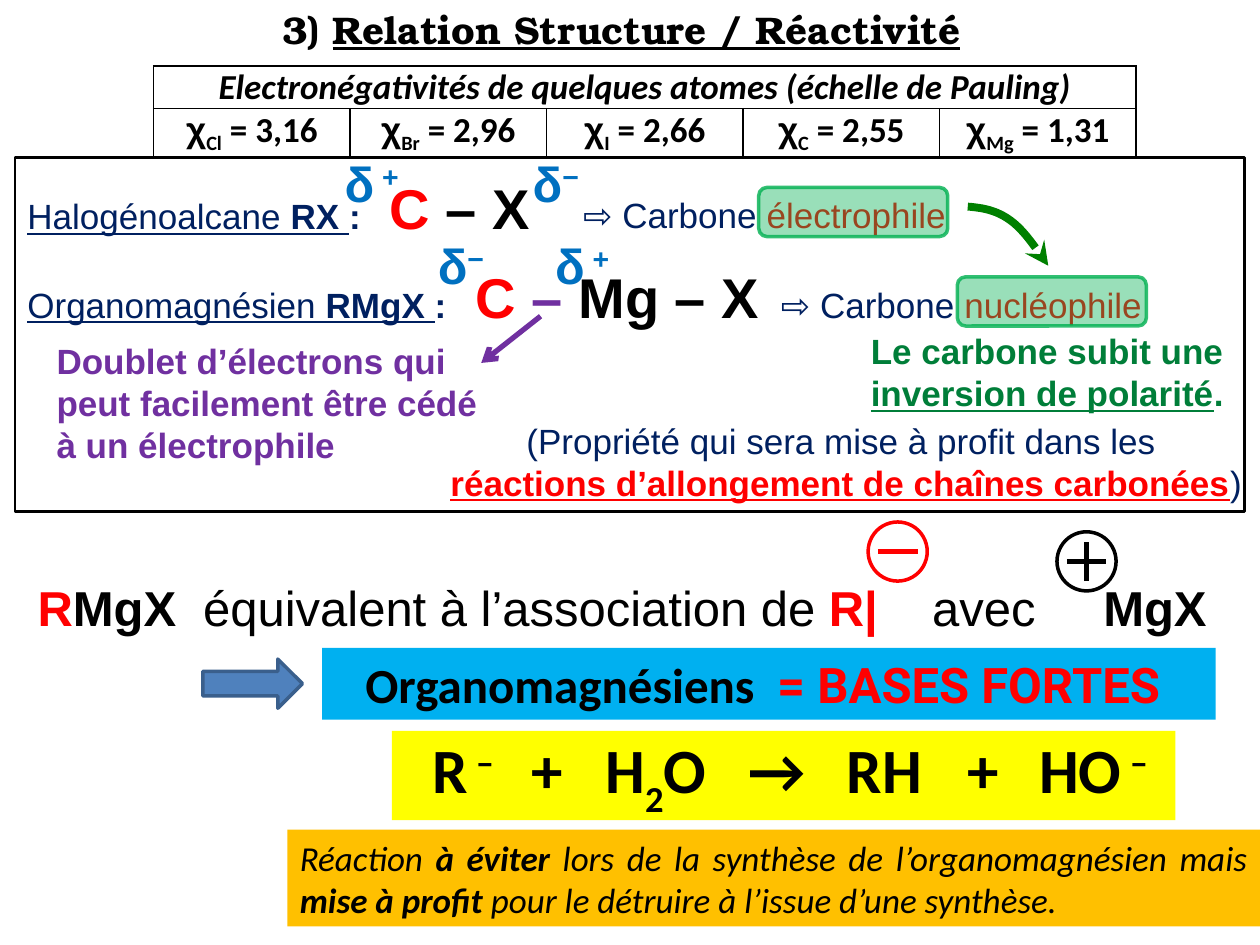
from pptx import Presentation
from pptx.util import Pt
from pptx.dml.color import RGBColor
from pptx.enum.shapes import MSO_SHAPE as Shape, MSO_CONNECTOR as Link
from pptx.enum.text import PP_ALIGN as Align, MSO_ANCHOR as Anchor
from pptx.oxml.ns import qn
from lxml.etree import SubElement as Sub

THEME = dict(
    black="000000", white="FFFFFF", red="FF0000", navy="002060", blue="0070C0",
    purple="7030A0", forest="007E39", green="00B050", arrow="008000",
    sky="00B0F0", yellow="FFFF00", amber="FFC000", steel="4F81BD", edge="3A5F8C",
    sans="Arial", text="Calibri", bold="Roboto", serif="TeX Gyre Bonum",
    small=20, title=22, mid=28, big=32, huge=36)
SIDES = {"l": Align.LEFT, "c": Align.CENTER, "j": Align.JUSTIFY}
SHIFTS = {"^": "30000", "_": "-25000", "v": "-30000"}

# Content: a run is (text, flags, colour, size, font), all but the text optional.
# Flags: b bold, i italic, u underline, ^ raised, _ lowered, v lowered further
TITLE = [("3) ",), ("Relation Structure / Réactivité", "u")]
HEAD = "Electronégativités de quelques atomes (échelle de Pauling)"
ATOMS = [("Cl", "3,16"), ("Br", "2,96"), ("I", "2,66"), ("C", "2,55"), ("Mg", "1,31")]

# Boxes: place, paragraphs, colour, and options for type and layout
NOTES = [
    ((8.6, 95.8, 329, 46), [[
        ("Halogénoalcane ", "u"), ("RX", "bu"), (" ", "u"), (":\t", "b"),
        ("C", "b", "red", "big"), (" – X", "b", "black", "big")]],
     "navy", dict(tabs=[206.9])),
    ((8.6, 146.5, 448, 46), [[
        ("Organomagnésien ", "u"), ("RMgX", "bu"), (" ", "u"), (":\t", "b"),
        ("C ", "b", "red", "big"), ("–", "b", "purple", "big"),
        (" Mg – X", "b", "black", "big")]],
     "navy", dict(tabs=[256.2])),
    ((490.5, 185, 229, 55.4), [[
        ("Le carbone subit une ", "b"), ("inversion de polarité", "bu"), (".", "b")]],
     "forest", {}),
    ((25.2, 190.4, 260.6, 80), [
        [("Doublet d’électrons qui", "b")],
        [("peut facilement être cédé à un électrophile", "b")]], "purple", {}),
    ((326.2, 107.3, 232, 31.7), [[("⇨ Carbone ",), ("électrophile", "", "red")]],
     "navy", dict(al="j")),
    ((439.2, 158.2, 232, 31.7), [[("⇨ Carbone ",), ("nucléophile", "", "red")]],
     "navy", dict(al="j")),
    ((247, 236.2, 473, 55.4), [
        [("(Propriété qui sera mise à profit dans les ",)],
        [("réactions d’allongement de chaînes carbonées", "bu", "red"), (")",)]],
     "navy", dict(al="c")),
    ((14.4, 326.4, 705, 41), [[
        ("R", "b", "red"), ("MgX\t", "b"), ("équivalent à l’association de ",),
        ("R|\t", "b", "red"), ("avec\t",), ("MgX", "b")]],
     "black", dict(size="mid", tabs=[94.6, 511.2, 609], mid=True)),
    ((184.1, 370.3, 510.5, 41), [[
        ("Organomagnésiens\t", "b"), ("= BASES FORTES", "b", "red", "mid", "bold")]],
     "black", dict(size="mid", face="text", fill="sky", pad=24.7, tabs=[235.3], mid=True)),
    ((223.9, 417.6, 447.8, 51.1), [[
        ("R", "b"), (" –", "b^"), ("\t+\tH", "b"), ("2", "bv"),
        ("O\t→\tRH\t+\tHO", "b"), (" –", "b^")]],
     "black", dict(size="huge", face="text", fill="yellow", pad=23,
                   tabs=[57, 99, 181, 237, 306, 347], mid=True)),
    ((164.2, 474.1, 555.8, 55.4), [[
        ("Réaction ", "i"), ("à éviter ", "bi"),
        ("lors de la synthèse de l’organomagnésien mais ", "i"),
        ("mise à profit ", "bi"), ("pour le détruire à l’issue d’une synthèse.", "i")]],
     "black", dict(face="text", fill="amber", al="j", mid=True)),
]
DELTAS = [(197, 84.2, " +"), (304.4, 84.2, "−"), (250.2, 131, "−"), (317.2, 131, " +")]
MARKS = [(433.6, 107.1), (547.1, 158.2)]
IONS = [(496.1, 298.3, "red", False), (604, 303.9, "black", True)]
CURVE = [((553, 118.1), (561.6, 118.8), (569.5, 120.2), (577.4, 126)),
         ((577.4, 126), (585.4, 131.8), (591.8, 141.8), (599, 151.9))]
FINE = 100  # freeform units per point


def tint(name):
    return RGBColor.from_string(THEME[name])


def pts(*nums):
    return [Pt(n) for n in nums]


def write(par, runs, color, size="small", face="sans", al="l", tabs=()):
    par.alignment = SIDES[al]
    if tabs:
        stops = Sub(par._p.get_or_add_pPr(), qn("a:tabLst"))
        for pos in tabs:
            Sub(stops, qn("a:tab"), pos=str(int(Pt(pos))), algn="l")
    par.font.name, par.font.size = THEME[face], Pt(THEME[size])
    par.font.color.rgb = tint(color)
    for text, *rest in runs:
        flags, hue, big, font = rest + ["", None, None, None][len(rest):]
        run = par.add_run()
        run.text = text
        run.font.bold, run.font.italic = "b" in flags, "i" in flags
        run.font.underline = "u" in flags
        if hue:
            run.font.color.rgb = tint(hue)
        if big:
            run.font.size = Pt(THEME[big])
        if font:
            run.font.name = THEME[font]
        for sign, shift in SHIFTS.items():
            if sign in flags:
                run._r.get_or_add_rPr().set("baseline", shift)


def inset(frame, left, right, top):
    frame.margin_left, frame.margin_right = pts(left, right)
    frame.margin_top = frame.margin_bottom = Pt(top)


def note(place, paras, color, fill=None, pad=7.2, mid=False, **look):
    box = slide.shapes.add_textbox(*pts(*place))
    frame = box.text_frame
    frame.word_wrap = True
    inset(frame, pad, min(pad, 7.2), 3.6)
    if mid:
        frame.vertical_anchor = Anchor.MIDDLE
    if fill:
        box.fill.solid()
        box.fill.fore_color.rgb = tint(fill)
    for i, runs in enumerate(paras):
        par = frame.add_paragraph() if i else frame.paragraphs[0]
        write(par, runs, color, **look)


def fade(fill, share):
    Sub(fill.find(".//" + qn("a:srgbClr")), qn("a:alpha"), val=str(share * 1000))


def shape(kind, place, fill, line, width):
    item = slide.shapes.add_shape(kind, *pts(*place))
    item.shadow.inherit = False
    if fill:
        item.fill.solid()
        item.fill.fore_color.rgb = tint(fill)
    else:
        item.fill.background()
    item.line.color.rgb, item.line.width = tint(line), Pt(width)
    return item


def tip(item, kind):
    Sub(item.line._get_or_add_ln(), qn("a:tailEnd"), type=kind)


def link(ends, color):
    item = slide.shapes.add_connector(Link.STRAIGHT, *pts(*ends))
    item.line.color.rgb, item.line.width = tint(color), Pt(3)
    Sub(item._element.spPr, qn("a:effectLst"))
    return item


def bezier(nodes, t):
    mix = ((1 - t) ** 3, 3 * t * (1 - t) ** 2, 3 * t * t * (1 - t), t ** 3)
    return tuple(FINE * sum(m * n[k] for m, n in zip(mix, nodes)) for k in (0, 1))


def fit(cell, runs):
    cell.fill.background()
    cell.vertical_anchor = Anchor.MIDDLE
    inset(cell, 5, 5, 0)
    write(cell.text_frame.paragraphs[0], runs, "black", face="text", al="c")


def frame_cell(cell):
    props = cell._tc.get_or_add_tcPr()
    for i, side in enumerate(("lnL", "lnR", "lnT", "lnB")):
        edge = props.makeelement(qn("a:" + side), {"w": str(int(Pt(1)))})
        Sub(Sub(edge, qn("a:solidFill")), qn("a:srgbClr"), val=THEME["black"])
        props.insert(i, edge)


deck = Presentation()
deck.slide_width, deck.slide_height = pts(720, 540)
slide = deck.slides.add_slide(deck.slide_layouts[5])

# Title
head = slide.shapes.title
head.left, head.top, head.width, head.height = pts(154, 0, 407, 33.6)
head.text_frame.word_wrap = False
head.text_frame.vertical_anchor = Anchor.MIDDLE
write(head.text_frame.paragraphs[0], [(t, "b" + "".join(f)) for t, *f in TITLE],
      "black", "title", "serif")

# Electronegativity table
grid = slide.shapes.add_table(2, len(ATOMS), *pts(87.8, 37.6, 561.5, 44.6)).table
grid.first_row = grid.horz_banding = False
for row in grid.rows:
    row.height = Pt(22.3)
grid.cell(0, 0).merge(grid.cell(0, len(ATOMS) - 1))
fit(grid.cell(0, 0), [(HEAD, "bi")])
for i, (atom, value) in enumerate(ATOMS):
    fit(grid.cell(1, i), [("χ", "b", None, None, "sans"), (atom, "b_"),
                          (" = " + value, "b")])
for cell in grid.iter_cells():
    frame_cell(cell)

# Frame and texts
shape(Shape.RECTANGLE, (8.6, 90, 702.7, 202.3), "white", "black", 1.5)
for place, paras, color, look in NOTES:
    note(place, paras, color, **look)

# Highlights and partial charges
for x, y in MARKS:
    mark = shape(Shape.ROUNDED_RECTANGLE, (x, y, 108, 28.1), "green", "green", 2)
    fade(mark._element.spPr.find(qn("a:solidFill")), 40)
    fade(mark.line._get_or_add_ln(), 80)
for x, y, sign in DELTAS:
    note((x, y, 50, 41), [[("δ", "b"), (sign, "b^")]], "blue", size="mid", pad=0)

# Arrows
tip(link((308.9, 180.7, 275, 207.4), "purple"), "arrow")
dots = [bezier(part, k / 12) for part in CURVE for k in range(13)]
path = slide.shapes.build_freeform(*dots[0], scale=Pt(1) / FINE)
path.add_line_segments(dots[1:], close=False)
bend = path.convert_to_shape()
bend.shadow.inherit = False
bend.fill.background()
bend.line.color.rgb, bend.line.width = tint("arrow"), Pt(4.5)
tip(bend, "stealth")
shape(Shape.RIGHT_ARROW, (115.9, 376.6, 56.9, 28.1), "steel", "edge", 2)

# Circled charges
for x, y, color, plus in IONS:
    shape(Shape.OVAL, (x, y, 33.8, 33.8), None, color, 2)
    cx, cy, arm = x + 16.9, y + 16.9, 11.3
    link((cx - arm, cy, cx + arm, cy), color)
    if plus:
        link((cx, cy + arm, cx, cy - arm), color)

deck.save("out.pptx")
